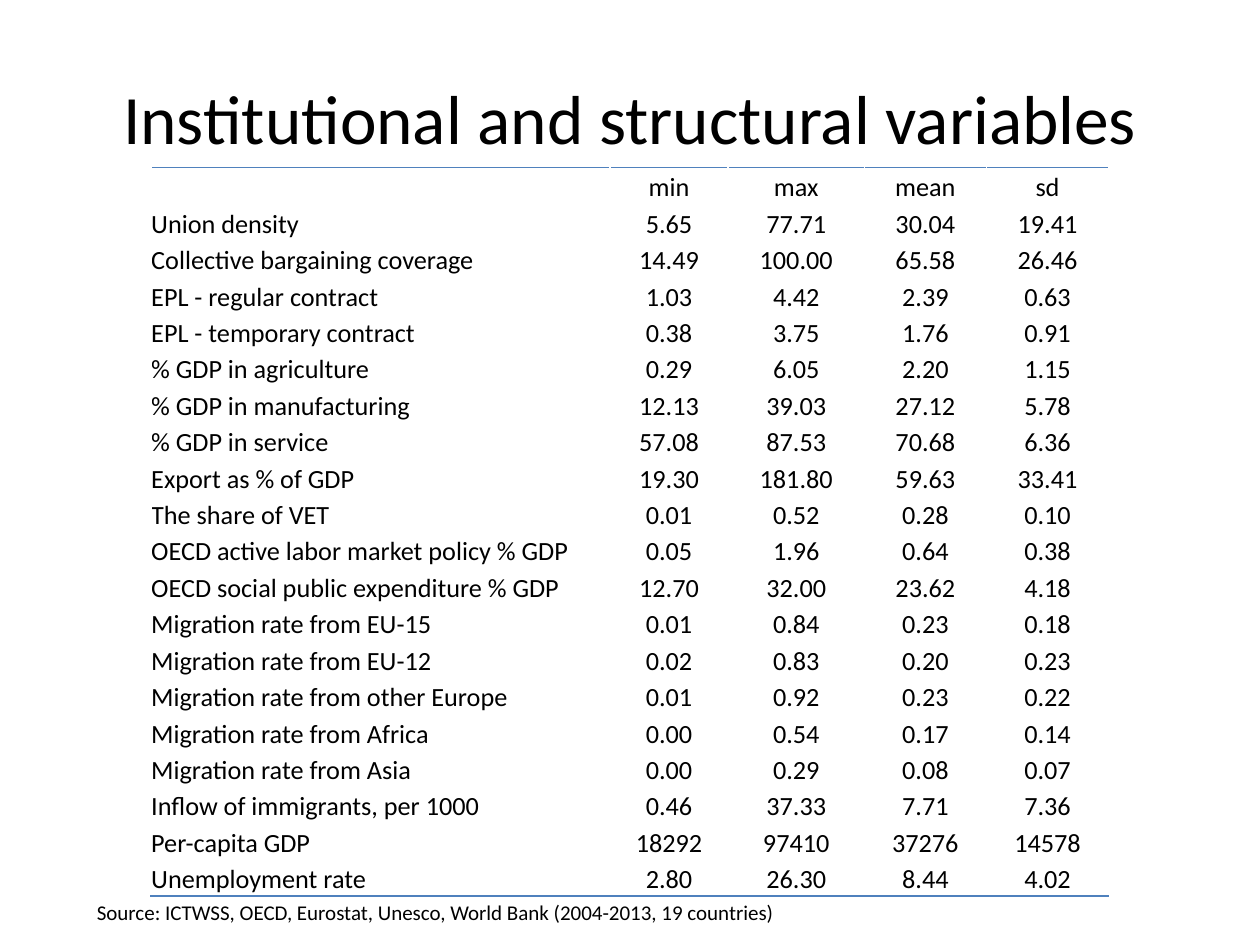
from lxml import etree
from pptx import Presentation
from pptx import util as u
from pptx.dml.color import RGBColor
from pptx.enum import text as t
from pptx.oxml import ns

INK, RULE = "000000", "4F81BD"
WIDTHS = [3.64, 0.94, 1.08, 0.97, 0.97]
ROW = 0.289
STATS = [
    ("", "min", "max", "mean", "sd"),
    ("Union density", "5.65", "77.71", "30.04", "19.41"),
    ("Collective bargaining coverage", "14.49", "100.00", "65.58", "26.46"),
    ("EPL - regular contract", "1.03", "4.42", "2.39", "0.63"),
    ("EPL - temporary contract", "0.38", "3.75", "1.76", "0.91"),
    ("% GDP in agriculture", "0.29", "6.05", "2.20", "1.15"),
    ("% GDP in manufacturing", "12.13", "39.03", "27.12", "5.78"),
    ("% GDP in service", "57.08", "87.53", "70.68", "6.36"),
    ("Export as % of GDP", "19.30", "181.80", "59.63", "33.41"),
    ("The share of VET", "0.01", "0.52", "0.28", "0.10"),
    ("OECD active labor market policy % GDP", "0.05", "1.96", "0.64", "0.38"),
    ("OECD social public expenditure % GDP", "12.70", "32.00", "23.62", "4.18"),
    ("Migration rate from EU-15", "0.01", "0.84", "0.23", "0.18"),
    ("Migration rate from EU-12", "0.02", "0.83", "0.20", "0.23"),
    ("Migration rate from other Europe", "0.01", "0.92", "0.23", "0.22"),
    ("Migration rate from Africa", "0.00", "0.54", "0.17", "0.14"),
    ("Migration rate from Asia", "0.00", "0.29", "0.08", "0.07"),
    ("Inflow of immigrants, per 1000", "0.46", "37.33", "7.71", "7.36"),
    ("Per-capita GDP", "18292", "97410", "37276", "14578"),
    ("Unemployment rate", "2.80", "26.30", "8.44", "4.02"),
]


def color(code):
    """Turn a hex string into a colour."""
    return RGBColor.from_string(code)


def write(frame, words, size, align):
    """Put one styled paragraph into a text frame."""
    para = frame.paragraphs[0]
    para.text = words
    para.alignment = align
    para.font.name = "Calibri"
    para.font.size = u.Pt(size)
    para.font.color.rgb = color(INK)


def add_text(slide, box, words, size, align, anchor):
    """Add a wrapped text box."""
    frame = slide.shapes.add_textbox(*map(u.Inches, box)).text_frame
    frame.word_wrap = True
    frame.vertical_anchor = anchor
    write(frame, words, size, align)


def add_rule(cell, side):
    """Draw a thin border on one side of a cell."""
    line = etree.Element(ns.qn(f"a:ln{side}"), w=str(u.Pt(1)))
    fill = etree.SubElement(line, ns.qn("a:solidFill"))
    etree.SubElement(fill, ns.qn("a:srgbClr"), val=RULE)
    cell._tc.get_or_add_tcPr().insert(0, line)


def fill_cell(cell, words, align):
    """Set a cell's text, with no fill and no margins."""
    cell.fill.background()
    cell.margin_left = cell.margin_right = 0
    cell.margin_top = cell.margin_bottom = 0
    cell.vertical_anchor = t.MSO_ANCHOR.BOTTOM
    write(cell.text_frame, words, 15, align)


def add_stats(slide, left, top):
    """Add the table of statistics, ruled above and below."""
    size = sum(WIDTHS), ROW * len(STATS)
    table = slide.shapes.add_table(
        len(STATS), len(WIDTHS), *map(u.Inches, (left, top, *size))).table
    table.first_row = table.horz_banding = False
    for col, width in zip(table.columns, WIDTHS):
        col.width = u.Inches(width)
    for r, row in enumerate(STATS):
        table.rows[r].height = u.Inches(ROW)
        for c, words in enumerate(row):
            align = t.PP_ALIGN.CENTER if c else t.PP_ALIGN.LEFT
            fill_cell(table.cell(r, c), words, align)
    for c in range(len(WIDTHS)):
        add_rule(table.cell(0, c), "T")
        add_rule(table.cell(len(STATS) - 1, c), "B")


def main():
    """Build and save the slide."""
    deck = Presentation()
    deck.slide_width, deck.slide_height = u.Inches(10), u.Inches(7.5)
    slide = deck.slides.add_slide(deck.slide_layouts[6])
    add_text(slide, (0.5, 0.3, 9, 1.25), "Institutional and structural variables",
             39.6, t.PP_ALIGN.CENTER, t.MSO_ANCHOR.MIDDLE)
    add_stats(slide, 1.2, 1.33)
    add_text(slide, (0.67, 7.09, 6.93, 0.82),
             "Source: ICTWSS, OECD, Eurostat, Unesco, World Bank (2004-2013, 19 countries)",
             12, t.PP_ALIGN.LEFT, t.MSO_ANCHOR.TOP)
    deck.save("out.pptx")


if __name__ == "__main__":
    main()
